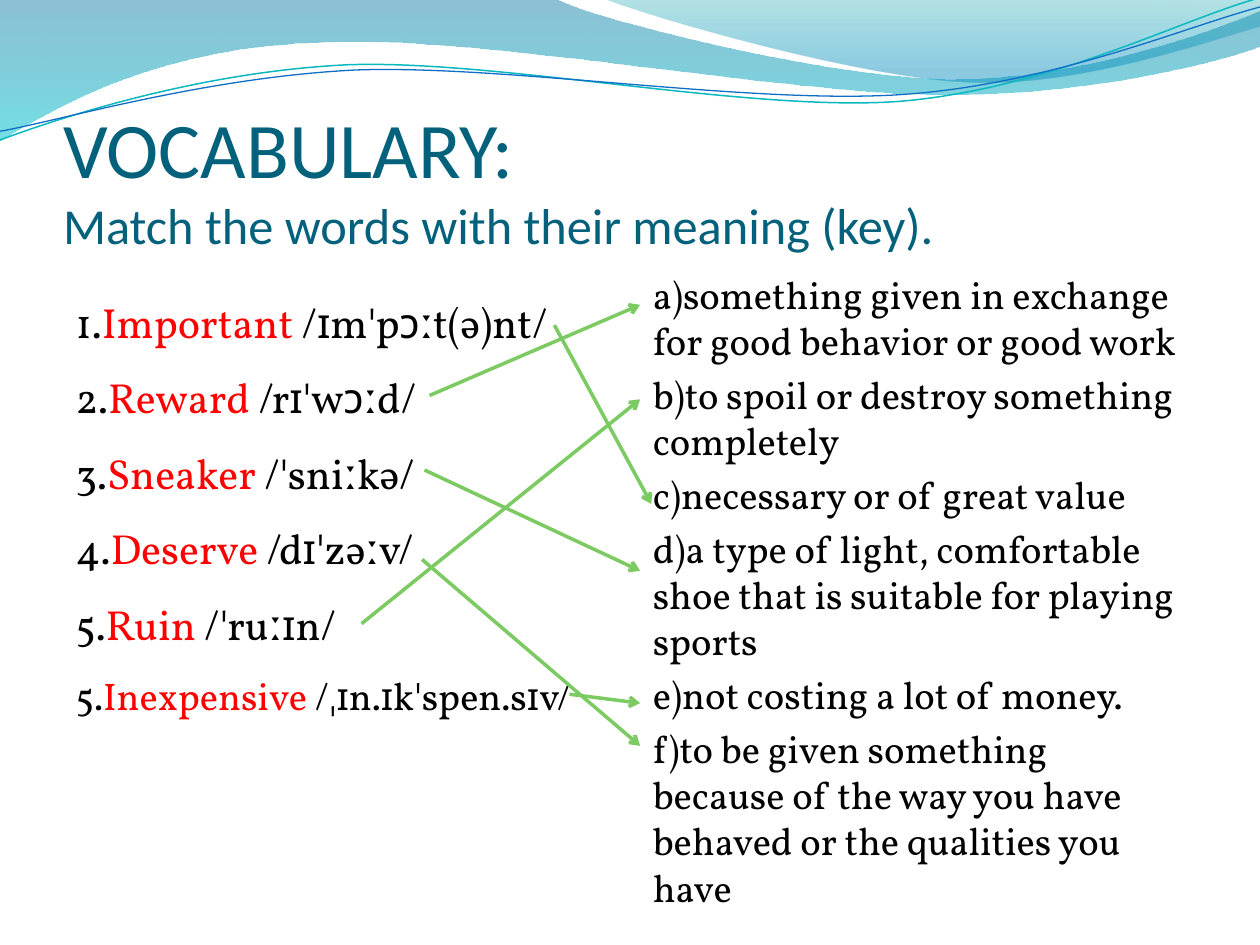
from dataclasses import dataclass
from math import cos, radians, sin

from lxml.etree import SubElement
from pptx import Presentation
from pptx.dml.color import RGBColor
from pptx.enum.shapes import MSO_CONNECTOR
from pptx.enum.text import MSO_ANCHOR, MSO_AUTO_SIZE, PP_ALIGN
from pptx.oxml.ns import qn
from pptx.util import Pt

COLORS = {
    "title": "04617B", "text": "000000", "word": "FF0000", "arrow": "7CCA62",
    "teal_line": "0AB8BF", "blue_line": "0F6FC6",
    "band_top": "0074A1", "band_bottom": "00C6CF",
    "crest_top": "00A1A9", "crest_bottom": "008BBF",
}
HEADING_FONT, BODY_FONT = "Calibri", "Vollkorn"


@dataclass
class Stop:
    position: float
    color: str
    alpha: int


@dataclass
class Wave:
    """Two numbers make a line, six make a Bézier curve."""
    start: tuple
    segments: list
    stops: tuple = ()
    line: str = ""
    width: float = 0
    tilt: float = 0
    center: tuple = (0, 0)


@dataclass
class Entry:
    number: str
    word: str
    sound: str
    size: float = 24


@dataclass
class Match:
    start: tuple
    end: tuple


WAVES = [
    Wave((0, 0), [(317, -1), (343, 12, 478, 45, 546, 45), (614, 45, 690, 19, 720, 6),
                  (721, 26), (708, 32, 626, 55, 537, 54), (448, 54, 275, 20, 185, 24),
                  (93, 26, 33, 60, -1, 81), (0, 0)],
         stops=(Stop(0, "band_top", 45), Stop(1, "band_bottom", 55))),
    Wave((345, -1), [(366, 8, 491, 45, 554, 47), (616, 50, 692, 23, 720, 15),
                     (720, 0), (345, -1)],
         stops=(Stop(0, "crest_top", 30), Stop(0.8, "crest_bottom", 45))),
    Wave((0, 80), [(35, 67, 114, 41, 199, 37), (285, 34, 427, 64, 513, 58),
                   (600, 51, 675, 11, 719, -1)],
         line="teal_line", width=0.85, tilt=2.7, center=(359.3, 41.4)),
    Wave((0, 75), [(34, 69, 118, 44, 204, 40), (290, 37, 430, 60, 516, 54),
                   (602, 48, 678, 15, 720, 4)],
         line="blue_line", width=0.75, tilt=2.7, center=(359.6, 42.5)),
]
ENTRIES = [
    Entry("1.", "Important", " /ɪmˈpɔːt(ə)nt/ "),
    Entry("2.", "Reward", " /rɪˈwɔːd/ "),
    Entry("3.", "Sneaker", " /ˈsniːkə/ "),
    Entry("4.", "Deserve ", "/dɪˈzəːv/"),
    Entry("5.", "Ruin", " /ˈruːɪn/ "),
    Entry("5.", "Inexpensive", " /ˌɪn.ɪkˈspen.sɪv/ ", 22),
]
MEANINGS = [
    "a)something given in exchange for good behavior or good work",
    "b)to spoil or destroy something completely",
    "c)necessary or of great value",
    "d)a type of light, comfortable shoe that is suitable for playing sports",
    "e)not costing a lot of money.",
    "f)to be given something because of the way you have behaved or the qualities you have",
]
MEANING_SIZE = 22
ARROW_END = 365.8
MATCHES = [
    Match((245.5, 226), (ARROW_END, 174.2)),
    Match((316.8, 185.8), (372.2, 288)),
    Match((242.6, 268.6), (ARROW_END, 326.2)),
    Match((241.2, 319.7), (ARROW_END, 426.2)),
    Match((206.6, 356.4), (ARROW_END, 228.2)),
    Match((325.4, 396.7), (ARROW_END, 401.8)),
]


def rgb(name: str) -> RGBColor:
    return RGBColor.from_string(COLORS[name])


def turn(point: tuple, wave: Wave) -> tuple:
    """Turn a point clockwise by the tilt of the wave, in EMU."""
    angle = radians(wave.tilt)
    x, y = point[0] - wave.center[0], point[1] - wave.center[1]
    return (Pt(wave.center[0] + x * cos(angle) - y * sin(angle)),
            Pt(wave.center[1] + x * sin(angle) + y * cos(angle)))


def bend(shape, wave: Wave) -> None:
    """Join each three lines that stand for a curve into one Bézier curve."""
    lines = iter(list(shape.element.iter(qn("a:lnTo"))))
    for segment in wave.segments:
        first = next(lines)
        if len(segment) == 6:
            first.tag = qn("a:cubicBezTo")
            for extra in (next(lines), next(lines)):
                first.append(extra[0])
                extra.getparent().remove(extra)


def draw_wave(page, wave: Wave) -> None:
    builder = page.shapes.build_freeform(*turn(wave.start, wave))
    points = [turn(segment[i:i + 2], wave)
              for segment in wave.segments for i in range(0, len(segment), 2)]
    builder.add_line_segments(points, close=bool(wave.stops))
    shape = builder.convert_to_shape()
    bend(shape, wave)
    shape.rotation = -wave.tilt
    shape.shadow.inherit = False
    if not wave.stops:
        shape.fill.background()
        shape.line.color.rgb = rgb(wave.line)
        shape.line.width = Pt(wave.width)
        return
    shape.line.fill.background()
    shape.fill.gradient()
    shape.fill.gradient_angle = 270
    for target, stop in zip(shape.fill.gradient_stops, wave.stops):
        target.position = stop.position
        target.color.rgb = rgb(stop.color)
    colors = shape.element.spPr.find(qn("a:gradFill")).iter(qn("a:srgbClr"))
    for color, stop in zip(colors, wave.stops):
        SubElement(color, qn("a:alpha"), val=str(stop.alpha * 1000))


def place(box, left: float, top: float, width: float, height: float):
    box.left, box.top, box.width, box.height = Pt(left), Pt(top), Pt(width), Pt(height)
    box.element.getparent().append(box.element)  # in front of the waves
    frame = box.text_frame
    frame.word_wrap = True
    frame.auto_size = MSO_AUTO_SIZE.NONE
    return frame


def add_span(para, text: str, size: float, color: str, font: str = BODY_FONT) -> None:
    span = para.add_run()
    span.text = text
    span.font.name, span.font.size = font, Pt(size)
    span.font.color.rgb = rgb(color)


def add_para(frame, index: int, space: float = 0):
    para = frame.add_paragraph() if index else frame.paragraphs[0]
    properties = para._p.get_or_add_pPr()
    properties.set("marL", "0")
    properties.set("indent", "0")
    SubElement(properties, qn("a:buNone"))
    para.space_before = Pt(space if index else 0)
    return para


def draw_match(page, match: Match) -> None:
    arrow = page.shapes.add_connector(
        MSO_CONNECTOR.STRAIGHT, *(Pt(value) for value in match.start + match.end))
    arrow.line.color.rgb = rgb("arrow")
    arrow.line.width = Pt(2)
    SubElement(arrow.element.spPr.find(qn("a:ln")), qn("a:tailEnd"), type="arrow")
    SubElement(arrow.element.spPr, qn("a:effectLst"))


def main() -> None:
    deck = Presentation()
    deck.slide_width, deck.slide_height = Pt(720), Pt(540)
    page = deck.slides.add_slide(deck.slide_layouts[3])

    # Waves along the top
    for wave in WAVES:
        draw_wave(page, wave)
    # Title
    frame = place(page.shapes.title, 36, 55.4, 648, 90)
    frame.vertical_anchor = MSO_ANCHOR.BOTTOM
    frame.margin_left = frame.margin_right = frame.margin_bottom = 0
    para = frame.paragraphs[0]
    para.alignment = PP_ALIGN.LEFT
    add_span(para, "VOCABULARY: ", 45, "title", HEADING_FONT)
    para.add_line_break()
    add_span(para, "Match the words with their meaning (key).", 28.8, "title", HEADING_FONT)
    # Words with their pronunciation
    frame = place(page.placeholders[1], 36, 151.2, 318.2, 349.2)
    for index, entry in enumerate(ENTRIES):
        para = add_para(frame, index)
        para.alignment = PP_ALIGN.JUSTIFY
        para.line_spacing = 1.5
        add_span(para, entry.number, entry.size, "text")
        add_span(para, entry.word, entry.size, "word")
        add_span(para, entry.sound, entry.size, "text")
    # Meanings
    frame = place(page.placeholders[2], 365.8, 151.2, 318.2, 349.2)
    for index, meaning in enumerate(MEANINGS):
        add_span(add_para(frame, index, 0.2 * MEANING_SIZE), meaning, MEANING_SIZE, "text")
    # Arrows from word to meaning
    for match in MATCHES:
        draw_match(page, match)
    deck.save("out.pptx")


if __name__ == "__main__":
    main()
